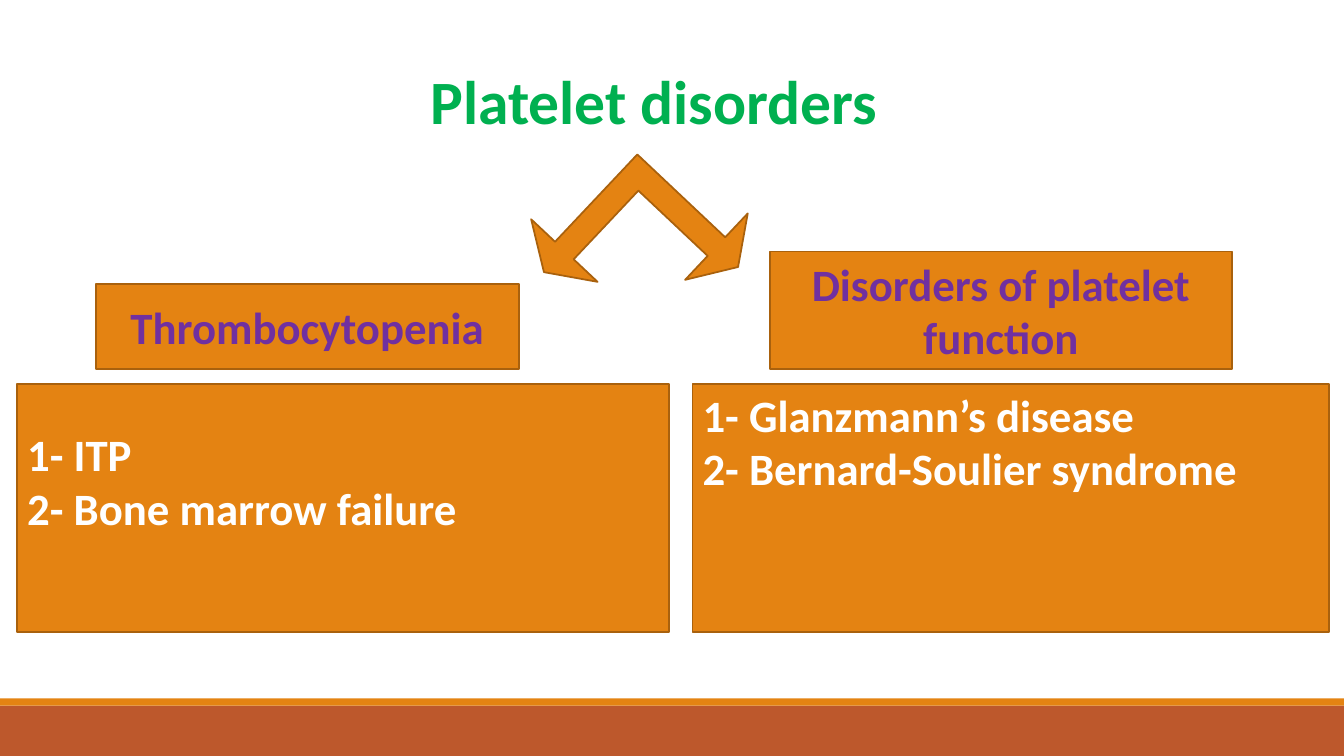
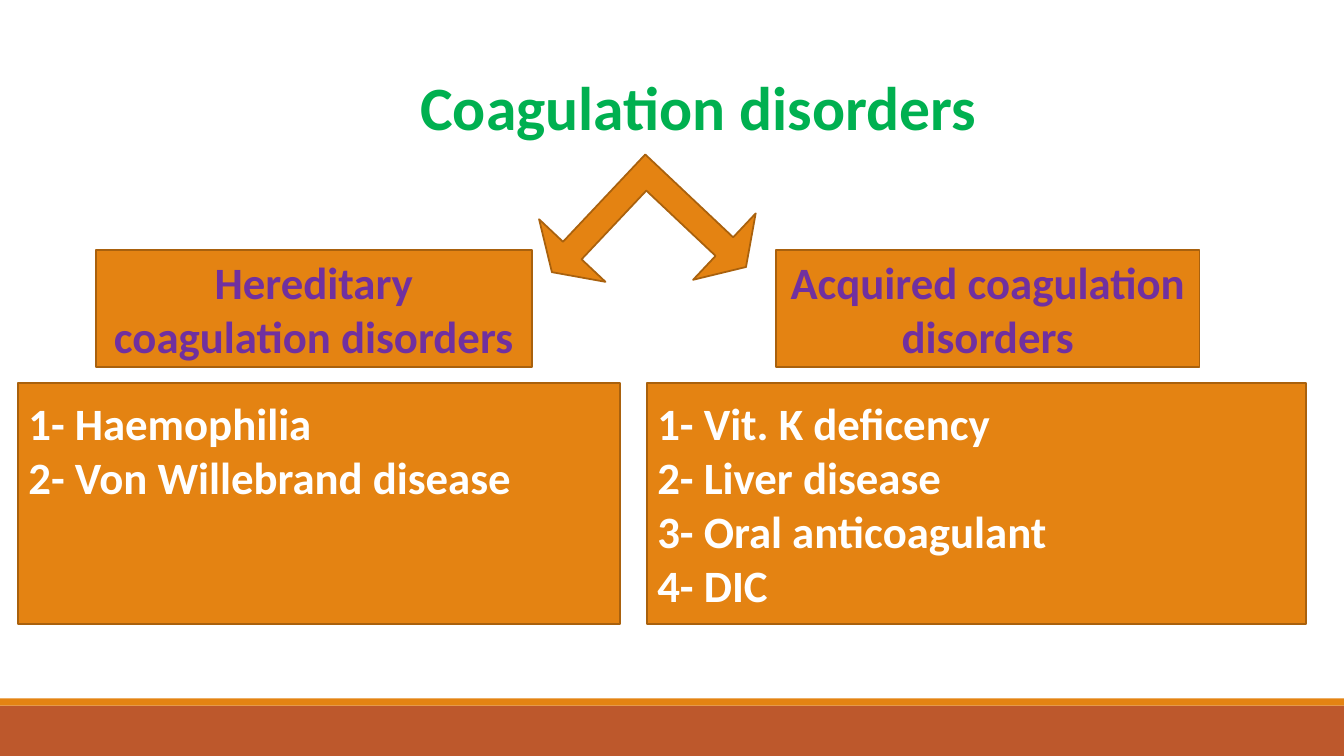
from lxml import etree
from pptx import Presentation
from pptx.dml.color import RGBColor
from pptx.enum.shapes import MSO_SHAPE
from pptx.enum.text import MSO_ANCHOR, MSO_AUTO_SIZE, PP_ALIGN
from pptx.oxml.ns import qn
from pptx.util import Cm, Pt

RECTANGLE, FORKED_ARROW = MSO_SHAPE.RECTANGLE, MSO_SHAPE.LEFT_UP_ARROW
TOP, MIDDLE = MSO_ANCHOR.TOP, MSO_ANCHOR.MIDDLE
LEFT, CENTER = PP_ALIGN.LEFT, PP_ALIGN.CENTER
NO_AUTOFIT = MSO_AUTO_SIZE.NONE

FONT = "Calibri"
ORANGE, EDGE, RUST = "E48312", "A9610D", "BD582C"
GREEN, PURPLE, WHITE = "00B050", "7030A0", "FFFFFF"
COMPARISON_LAYOUT = 4
WIDTH, HEIGHT = 33.87, 19.05

# Boxes are (left, top, width, height) in centimetres.
# Each branch: heading, heading box, list items, list box, inset above the list.
PAGES = [
    {
        "title": "Platelet disorders",
        "title_box": (10.59, 1.47, 14.43, 2.13),
        "arrow_left": 13.82,
        "branches": [
            ("Thrombocytopenia", (2.41, 7.16, 10.67, 2.13),
             ["1- ITP", "2- Bone marrow failure"],
             (0.43, 9.68, 16.43, 6.25), 1.07),
            ("Disorders of platelet function", (19.41, 6.34, 11.63, 2.95),
             ["1- Glanzmann’s disease", "2- Bernard-Soulier syndrome"],
             (17.45, 9.68, 16.05, 6.25), 0.08),
        ],
    },
    {
        "title": "Coagulation disorders",
        "title_box": (10.34, 1.6, 15.19, 2.13),
        "arrow_left": 14.02,
        "branches": [
            ("Hereditary\vcoagulation disorders", (2.41, 6.3, 11, 2.95),
             ["1- Haemophilia", "2- Von Willebrand disease"],
             (0.46, 9.65, 15.16, 6.07), 0.33),
            ("Acquired coagulation disorders", (19.56, 6.3, 10.67, 2.95),
             ["1- Vit. K deficency", "2- Liver disease",
              "3- Oral anticoagulant", "4- DIC"],
             (16.31, 9.65, 16.61, 6.07), 0.33),
        ],
    },
]


def color(value):
    return RGBColor.from_string(value)


def paint(shape, fill, edge=None):
    shape.fill.solid()
    shape.fill.fore_color.rgb = color(fill)
    if edge:
        shape.line.color.rgb = color(edge)
        shape.line.width = Pt(1.25)
    else:
        shape.line.fill.background()


def place(shape, box):
    shape.left, shape.top, shape.width, shape.height = map(Cm, box)


def write(shape, lines, size, text_color, align, anchor):
    """Fill a placeholder with plain, bold, unbulleted lines."""
    frame = shape.text_frame
    frame.word_wrap = True
    frame.auto_size = NO_AUTOFIT
    frame.vertical_anchor = anchor
    for index, line in enumerate(lines):
        para = frame.add_paragraph() if index else frame.paragraphs[0]
        para.text = line
        properties = para._p.get_or_add_pPr()
        properties.set("marL", "0")
        properties.set("indent", "0")
        etree.SubElement(properties, qn("a:buNone"))
        para.alignment = align
        para.space_before = Pt(0)
        para.font.name = FONT
        para.font.size = Pt(size)
        para.font.bold = True
        para.font.color.rgb = color(text_color)


def move_to_master(deck, shape, number):
    """Put a shape behind everything on the slide master, with its own id."""
    shape.element.nvSpPr.cNvPr.set("id", str(100 + number))
    deck.slide_master.shapes.element.insert(2 + number, shape.element)


def add_footer_bands(deck, page):
    bands = [((0, 17.78, WIDTH, 1.27), RUST), ((0, 17.6, WIDTH, 0.18), ORANGE)]
    for number, (box, fill) in enumerate(bands):
        band = page.shapes.add_shape(RECTANGLE, *map(Cm, box))
        band.shadow.inherit = False
        paint(band, fill)
        move_to_master(deck, band, number)


def add_forked_arrow(page, left):
    arrow = page.shapes.add_shape(FORKED_ARROW, Cm(left), Cm(3.68), Cm(4.62), Cm(4.6))
    arrow.shadow.inherit = False
    arrow.rotation = 223.3
    for index, value in enumerate((0.14, 0.25, 0.163)):
        arrow.adjustments[index] = value
    paint(arrow, ORANGE, EDGE)


def add_branch(heading_holder, list_holder, branch):
    heading, heading_box, items, list_box, inset = branch
    place(heading_holder, heading_box)
    paint(heading_holder, ORANGE, EDGE)
    write(heading_holder, [heading], 32, PURPLE, CENTER, MIDDLE)
    heading_frame = heading_holder.text_frame
    heading_frame.margin_top = heading_frame.margin_bottom = Cm(0)
    place(list_holder, list_box)
    paint(list_holder, ORANGE, EDGE)
    write(list_holder, items, 32, WHITE, LEFT, TOP)
    list_holder.text_frame.margin_top = Cm(inset)


def add_page(deck, content):
    page = deck.slides.add_slide(deck.slide_layouts[COMPARISON_LAYOUT])
    title, *holders = page.placeholders
    place(title, content["title_box"])
    write(title, [content["title"]], 44, GREEN, LEFT, TOP)
    for index, branch in enumerate(content["branches"]):
        add_branch(*holders[2 * index:2 * index + 2], branch)
    add_forked_arrow(page, content["arrow_left"])
    return page


def main():
    deck = Presentation()
    deck.slide_width, deck.slide_height = Cm(WIDTH), Cm(HEIGHT)
    pages = [add_page(deck, content) for content in PAGES]
    add_footer_bands(deck, pages[0])
    deck.save("out.pptx")


if __name__ == "__main__":
    main()
